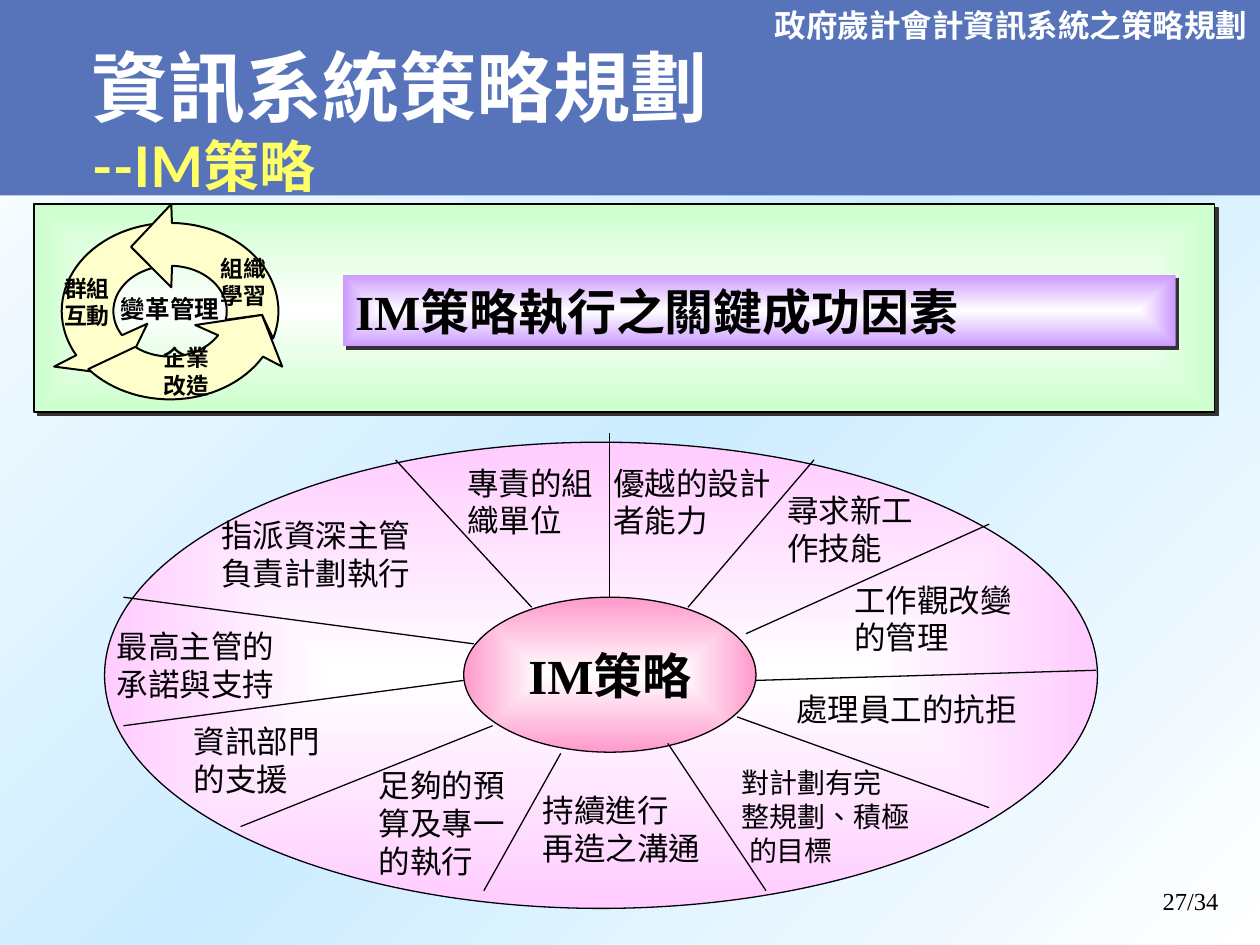
from math import cos, radians, sin
from typing import NamedTuple

from lxml.etree import SubElement
from pptx import Presentation
from pptx.dml.color import RGBColor
from pptx.enum.shapes import MSO_CONNECTOR, MSO_SHAPE
from pptx.enum.text import MSO_ANCHOR, MSO_AUTO_SIZE, PP_ALIGN
from pptx.oxml.ns import qn
from pptx.util import Inches, Pt

WHITE = RGBColor(0xFF, 0xFF, 0xFF)
BLACK = RGBColor(0, 0, 0)
BLUE = RGBColor(0x57, 0x74, 0xBB)
SKY = RGBColor(0xCC, 0xEC, 0xFF)
YELLOW = RGBColor(0xFF, 0xFF, 0x66)
CREAM = RGBColor(0xFF, 0xFF, 0xCC)
GREEN = RGBColor(0xCC, 0xFF, 0xCC)
VIOLET = RGBColor(0xCC, 0x99, 0xFF)
LILAC = RGBColor(0xFF, 0xCC, 0xFF)
PINK = RGBColor(0xFF, 0x99, 0xCC)
SHADOW = RGBColor(0x33, 0x33, 0x33)
SERIF, SANS, CJK = "Times New Roman", "Lato", "Noto Sans CJK TC"
CENTER, OUTER, INNER = (1.35, 2.47), (0.86, 0.7), (0.45, 0.36)


class Label(NamedTuple):
    text: str
    x: float
    y: float
    w: float
    h: float
    size: int = 18


class Spoke(NamedTuple):
    x1: float
    y1: float
    x2: float
    y2: float


class Arrow(NamedTuple):
    outer: tuple
    head: list
    inner: tuple
    tail: list


LABELS = [
    Label("專責的組\n織單位", 3.61, 3.63, 1.2, 0.7),
    Label("指派資深主管\n負責計劃執行", 1.66, 4.05, 1.7, 0.7),
    Label("最高主管的\n承諾與支持", 0.83, 4.93, 1.45, 0.7),
    Label("資訊部門\n的支援", 1.44, 5.68, 1.39, 0.7),
    Label("足夠的預\n算及專一\n的執行", 2.91, 6.03, 1.2, 1),
    Label("持續進行\n再造之溝通", 4.21, 6.23, 1.45, 0.7),
    Label("對計劃有完\n整規劃、積極\n 的目標", 5.79, 6.03, 1.53, 0.9, 16),
    Label("處理員工的抗拒", 6.22, 5.43, 1.95, 0.4),
    Label("工作觀改變\n的管理", 6.68, 4.56, 1.45, 0.7),
    Label("尋求新工\n作技能", 6.15, 3.85, 1.2, 0.7),
    Label("優越的設計\n者能力", 4.77, 3.63, 1.45, 0.7),
]
SPOKES = [
    Spoke(4.84, 4.74, 4.84, 3.44), Spoke(5.46, 4.82, 6.46, 3.65),
    Spoke(5.92, 5.03, 7.85, 4.16), Spoke(6, 5.4, 8.7, 5.32),
    Spoke(5.85, 5.69, 7.85, 6.41), Spoke(5.3, 5.9, 6.08, 7.07),
    Spoke(4.45, 5.98, 3.84, 7.07), Spoke(3.91, 5.76, 1.91, 6.56),
    Spoke(0.98, 5.76, 3.68, 5.4), Spoke(0.98, 4.74, 3.76, 5.11),
    Spoke(3.14, 3.65, 4.22, 4.82),
]
ARROWS = [
    Arrow((262, 150), [(0.43, 2.91), (0.97, 2.98), (1.17, 2.57)], (148, 254), []),
    Arrow((271, 378), [(2.08, 2.5)], (371, 272),
          [(1.36, 2.28), (1.04, 1.96), (1.36, 1.62)]),
    Arrow((31, 139), [], (128, 32), [(1.55, 2.58), (2.08, 2.5), (2.24, 2.91)]),
]
RING_LABELS = [
    Label("變革管理", 0.96, 2.33, 0.99, 0.25, 14),
    Label("組織\n學習", 1.75, 2.02, 0.36, 0.43, 13),
    Label("群組\n互動", 0.51, 2.18, 0.39, 0.43, 13),
    Label("企業\n改造", 1.3, 2.73, 0.36, 0.43, 13),
]


def add_run(p, text: str, *, size: int = 18, font: str = SERIF,
            color: RGBColor = BLACK, bold: bool = False) -> None:
    """Add a formatted run to a paragraph."""
    r = p.add_run()
    r.text = text
    r.font.size, r.font.name, r.font.bold = Pt(size), font, bold
    r.font.color.rgb = color
    rpr = r._r.get_or_add_rPr()
    rpr.set("lang", "zh-TW")
    rpr.find(qn("a:latin")).addnext(rpr.makeelement(qn("a:ea"), typeface=SANS))


def write(tf, text: str, *, align=PP_ALIGN.LEFT, **style) -> None:
    """Write each line of text as a paragraph."""
    for i, line in enumerate(text.split("\n")):
        p = tf.add_paragraph() if i else tf.paragraphs[0]
        p.alignment = align
        add_run(p, line, **style)


def add_label(s, label: Label, *, inset: bool = True, **style) -> None:
    """Add an unwrapped text box."""
    tf = s.shapes.add_textbox(*map(Inches, label[1:5])).text_frame
    tf.word_wrap = False
    if not inset:
        tf.margin_left = tf.margin_top = tf.margin_right = tf.margin_bottom = 0
    write(tf, label.text, size=label.size, **style)


def set_gradient(fill, element, colors: list, radial: bool = True) -> None:
    """Fill with evenly spaced colours, from the centre or along a diagonal."""
    fill.gradient()
    grad = element.find(".//" + qn("a:gradFill"))
    for child in list(grad):
        grad.remove(child)
    stops = SubElement(grad, qn("a:gsLst"))
    for i, color in enumerate(colors):
        gs = SubElement(stops, qn("a:gs"), pos=str(100000 * i // (len(colors) - 1)))
        SubElement(gs, qn("a:srgbClr"), val=str(color))
    if radial:
        shade = SubElement(grad, qn("a:path"), path="shape")
        SubElement(shade, qn("a:fillToRect"), dict.fromkeys("ltrb", "50000"))
    else:
        SubElement(grad, qn("a:lin"), ang="2700000", scaled="0")


def add_panel(s, kind, box: tuple, color: RGBColor, *, line: bool = True,
              shadow: bool = False):
    """Add a shape shaded from white to a colour."""
    sp = s.shapes.add_shape(kind, *map(Inches, box))
    set_gradient(sp.fill, sp.element, [WHITE, color])
    sp.shadow.inherit = False
    if line:
        sp.line.color.rgb, sp.line.width = BLACK, Pt(0.75)
    else:
        sp.line.fill.background()
    if shadow:
        effects = sp.element.spPr.find(qn("a:effectLst"))
        outer = SubElement(effects, qn("a:outerShdw"), blurRad="0",
                           dist=str(Pt(2.8)), dir="2700000", algn="ctr", rotWithShape="0")
        SubElement(outer, qn("a:srgbClr"), val=str(SHADOW))
    return sp


def arc(radii: tuple, angles: tuple, steps: int = 30) -> list:
    """Return points along an arc of the ring."""
    start, end = angles
    turns = [radians(start + (end - start) * i / steps) for i in range(steps + 1)]
    return [(CENTER[0] + radii[0] * cos(a), CENTER[1] + radii[1] * sin(a)) for a in turns]


def add_arrow(s, arrow: Arrow) -> None:
    """Add one curved arrow of the ring."""
    outline = arc(OUTER, arrow.outer) + arrow.head + arc(INNER, arrow.inner) + arrow.tail
    points = [(Inches(x), Inches(y)) for x, y in outline]
    builder = s.shapes.build_freeform(*points[0])
    builder.add_line_segments(points[1:], close=True)
    sp = builder.convert_to_shape()
    sp.fill.solid()
    sp.fill.fore_color.rgb = CREAM
    sp.line.color.rgb, sp.line.width = BLACK, Pt(1.13)
    sp.shadow.inherit = False


def add_spoke(s, spoke: Spoke) -> None:
    """Add one dividing line."""
    c = s.shapes.add_connector(MSO_CONNECTOR.STRAIGHT, *map(Inches, spoke))
    c.line.color.rgb, c.line.width = BLACK, Pt(0.75)
    SubElement(c.element.spPr, qn("a:effectLst"))


def add_header(s) -> None:
    """Add the blue band, the running head and the title."""
    title = s.shapes.title
    band = s.shapes.add_shape(MSO_SHAPE.RECTANGLE, 0, 0, Inches(10), Inches(1.55))
    band.fill.solid()
    band.fill.fore_color.rgb = BLUE
    band.line.fill.background()
    band.shadow.inherit = False
    title.element.addprevious(band.element)
    add_label(s, Label("政府歲計會計資訊系統之策略規劃", 6.05, 0, 3.95, 0.4),
              font=SANS, color=WHITE, bold=True)
    title.left, title.top, title.width, title.height = map(Inches, (0.67, 0.28, 9.14, 1.25))
    tf = title.text_frame
    tf.auto_size, tf.vertical_anchor = MSO_AUTO_SIZE.NONE, MSO_ANCHOR.TOP
    tf.margin_left = tf.margin_right = Inches(0.06)
    tf.margin_top = tf.margin_bottom = Inches(0.03)
    p = tf.paragraphs[0]
    p.alignment = PP_ALIGN.LEFT
    add_run(p, "資訊系統策略規劃", size=44, font=SANS, color=WHITE, bold=True)
    p.add_line_break()
    add_run(p, "--IM策略", size=32, font=SANS, color=YELLOW, bold=True)


def main() -> None:
    """Build and save the slide."""
    prs = Presentation()
    prs.slide_width, prs.slide_height = Inches(10), Inches(7.5)
    s = prs.slides.add_slide(prs.slide_layouts[5])
    set_gradient(s.background.fill, s.element, [WHITE, SKY, WHITE], radial=False)
    add_header(s)
    add_label(s, Label("27/34", 7.44, 6.98, 2.33, 0.52, 14), align=PP_ALIGN.RIGHT)
    add_panel(s, MSO_SHAPE.RECTANGLE, (0.27, 1.62, 9.37, 1.65), GREEN, shadow=True)
    for arrow in ARROWS:
        add_arrow(s, arrow)
    for label in RING_LABELS:
        add_label(s, label, inset=False, font=CJK, bold=True)
    banner = add_panel(s, MSO_SHAPE.RECTANGLE, (2.72, 2.18, 6.61, 0.57), VIOLET,
                       line=False, shadow=True)
    write(banner.text_frame, "IM策略執行之關鍵成功因素", size=28, bold=True)
    add_panel(s, MSO_SHAPE.OVAL, (0.83, 3.51, 7.88, 3.7), LILAC)
    hub = add_panel(s, MSO_SHAPE.OVAL, (3.68, 4.74, 2.32, 1.23), PINK)
    hub.text_frame.word_wrap = False
    write(hub.text_frame, "IM策略", align=PP_ALIGN.CENTER, size=28, bold=True)
    for spoke in SPOKES:
        add_spoke(s, spoke)
    for label in LABELS:
        add_label(s, label)
    prs.save("out.pptx")


if __name__ == "__main__":
    main()
